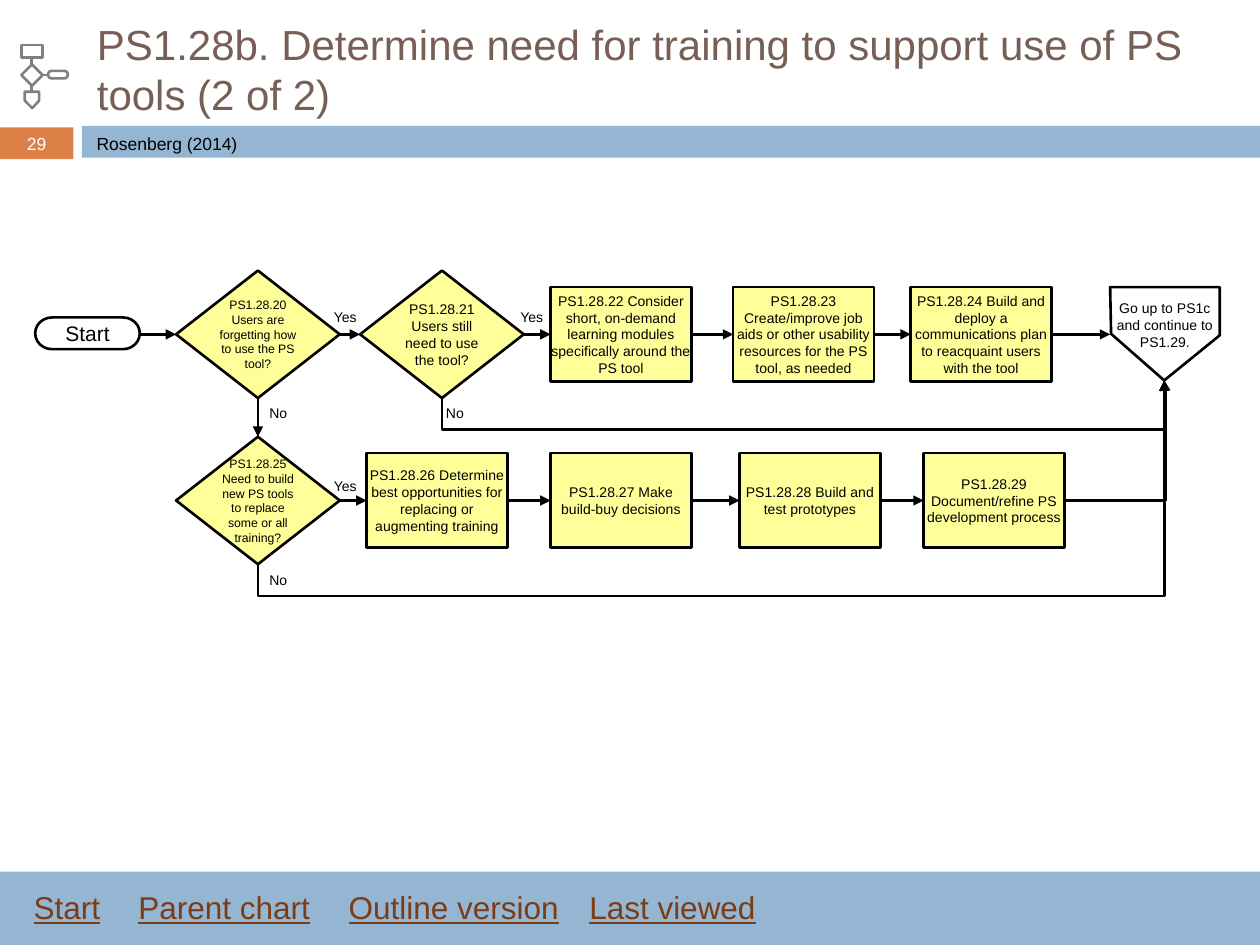
from itertools import pairwise

from lxml.etree import SubElement
from pptx import Presentation
from pptx.dml.color import RGBColor
from pptx.enum.shapes import MSO_CONNECTOR, MSO_SHAPE
from pptx.enum.text import MSO_ANCHOR, PP_ALIGN
from pptx.oxml.ns import qn
from pptx.util import Cm, Pt

BLACK, WHITE, GRAY = "000000", "FFFFFF", "808080"
BLUE, ORANGE, YELLOW = "94B6D2", "DD8047", "FFFF99"
TITLE_BROWN, LINK_BROWN = "775F55", "7B3C16"

ROW_1, ROW_2 = 6.74, 10.09  # centre lines of the two rows
BOX_SIZE, DIAMOND_SIZE = (2.84, 1.91), (3.3, 2.57)
TIP = (23.47, 7.67)  # lower point of the off-page connector
DROP = 0.64  # how far a "No" line falls before it turns


def color(value):
    return RGBColor.from_string(value)


def write(shape, paragraphs, size, text_color=BLACK, align=PP_ALIGN.CENTER,
          anchor=MSO_ANCHOR.MIDDLE, insets=None, underline=None):
    frame = shape.text_frame
    frame.word_wrap = True
    frame.vertical_anchor = anchor
    if insets:
        (frame.margin_left, frame.margin_top,
         frame.margin_right, frame.margin_bottom) = map(Cm, insets)
    for index, text in enumerate(paragraphs):
        paragraph = frame.add_paragraph() if index else frame.paragraphs[0]
        paragraph.alignment = align
        run = paragraph.add_run()
        run.text = text
        run.font.name = "Arial"
        run.font.size = Pt(size)
        run.font.underline = underline
        run.font.color.rgb = color(text_color)


def style(shape, fill=None, line=None):
    shape.shadow.inherit = False
    if fill:
        shape.fill.solid()
        shape.fill.fore_color.rgb = color(fill)
    else:
        shape.fill.background()
    if line:
        shape.line.color.rgb = color(line)
        shape.line.width = Pt(1.5)
    else:
        shape.line.fill.background()


def add_block(slide, kind, box, fill=None, line=None):
    shape = slide.shapes.add_shape(kind, *map(Cm, box))
    style(shape, fill, line)
    return shape


def add_outline(slide, points, fill, line):
    start, *others = [(Cm(x), Cm(y)) for x, y in points]
    builder = slide.shapes.build_freeform(*start, scale=1.0)
    builder.add_line_segments(others, close=True)
    shape = builder.convert_to_shape()
    style(shape, fill, line)
    return shape


def add_label(slide, box, text, size, **options):
    shape = slide.shapes.add_textbox(*map(Cm, box))
    write(shape, [text], size, align=PP_ALIGN.LEFT, **options)


def add_step(slide, kind, left, middle, text, size=8):
    width, height = DIAMOND_SIZE if kind == MSO_SHAPE.DIAMOND else BOX_SIZE
    box = (left, middle - height / 2, width, height)
    shape = add_block(slide, kind, box, YELLOW, BLACK)
    write(shape, [text], size, insets=(0, 0, 0, 0))
    return shape


def add_line(slide, start, end, line=BLACK, arrow=True, kind=MSO_CONNECTOR.STRAIGHT):
    connector = slide.shapes.add_connector(kind, *map(Cm, start + end))
    connector.line.color.rgb = color(line)
    connector.line.width = Pt(1.5)
    if arrow:
        SubElement(connector.line._get_or_add_ln(), qn("a:tailEnd"), type="triangle")
    SubElement(connector._element.spPr, qn("a:effectLst"))
    return connector


def set_bends(connector, preset, *adjustments):
    geometry = connector._element.spPr.find(qn("a:prstGeom"))
    geometry.set("prst", preset)
    guides = geometry.find(qn("a:avLst"))
    if guides is None:
        guides = SubElement(geometry, qn("a:avLst"))
    for number, value in enumerate(adjustments, 1):
        SubElement(guides, qn("a:gd"), name=f"adj{number}",
                   fmla=f"val {round(value * 100000)}")


def add_no_route(slide, start, end):
    """Run down by DROP, across, then up to the end point."""
    connector = add_line(slide, start, end, kind=MSO_CONNECTOR.ELBOW)
    across, rise = end[0] - start[0], start[1] - end[1]
    # The frame is turned by 90 degrees about its centre
    connector.left = Cm((start[0] + end[0] - rise) / 2)
    connector.top = Cm((start[1] + end[1] - across) / 2)
    connector.width, connector.height = Cm(rise), Cm(across)
    frame = connector._element.spPr.find(qn("a:xfrm"))
    for name, value in (("rot", "5400000"), ("flipH", "1"), ("flipV", "1")):
        frame.set(name, value)
    set_bends(connector, "bentConnector4", -DROP / rise, 1)


def link_row(slide, shapes, middle):
    for before, after in pairwise(shapes):
        right = (before.left + before.width) / Cm(1)
        add_line(slide, (right, middle), (after.left / Cm(1), middle))


def add_icon(slide):
    for kind, box in ((MSO_SHAPE.RECTANGLE, (0.43, 0.91, 0.43, 0.25)),
                      (MSO_SHAPE.DIAMOND, (0.43, 1.3, 0.43, 0.43)),
                      (MSO_SHAPE.FLOWCHART_TERMINATOR, (0.97, 1.43, 0.4, 0.15))):
        add_block(slide, kind, box, WHITE, GRAY)
    add_outline(slide, [(0.5, 1.85), (0.79, 1.85), (0.79, 2.03), (0.65, 2.18),
                        (0.5, 2.03)], WHITE, GRAY)
    for start, end in (((0.64, 1.16), (0.64, 1.3)), ((0.64, 1.73), (0.64, 1.85)),
                       ((0.86, 1.51), (0.97, 1.51))):
        add_line(slide, start, end, GRAY, arrow=False)


def add_page_frame(slide):
    # Bands and page number
    tag = add_block(slide, MSO_SHAPE.RECTANGLE, (0, 2.57, 1.48, 0.64), ORANGE)
    write(tag, ["29"], 10, WHITE)
    add_block(slide, MSO_SHAPE.RECTANGLE, (1.65, 2.54, 23.75, 0.64), BLUE)
    add_block(slide, MSO_SHAPE.RECTANGLE, (0, 17.57, 25.4, 1.48), BLUE)
    add_icon(slide)

    # Title and source
    title = slide.shapes.title
    title.left, title.top, title.width, title.height = map(Cm, (1.7, 0.2, 23.06, 2.36))
    write(title, ["PS1.28b. Determine need for training to support use of PS tools (2 of 2)"],
          24, TITLE_BROWN, PP_ALIGN.LEFT)
    add_label(slide, (1.7, 2.54, 23.06, 0.69), "Rosenberg (2014)", 10)

    # Navigation
    for left, width, text in ((0.43, 1.9, "Start"), (2.54, 4.01, "Parent chart"),
                              (6.78, 4.88, "Outline version"), (11.63, 3.86, "Last viewed")):
        add_label(slide, (left, 17.78, width, 1.02), text, 18, text_color=LINK_BROWN,
                  anchor=MSO_ANCHOR.TOP, underline=True)


def add_flowchart(slide):
    diamond, rectangle = MSO_SHAPE.DIAMOND, MSO_SHAPE.RECTANGLE

    # Terminals
    start = add_block(slide, MSO_SHAPE.FLOWCHART_TERMINATOR, (0.71, 6.4, 2.11, 0.64), line=BLACK)
    write(start, ["Start"], 12)
    exit_page = add_outline(slide, [(22.38, 5.79), (24.59, 5.79), (24.59, 6.76), TIP,
                                    (22.4, 6.73)], WHITE, BLACK)
    write(exit_page, ["Go up to PS1c and continue to", "PS1.29."], 8,
          anchor=MSO_ANCHOR.TOP, insets=(0, 0.25, 0, 0))

    # Steps
    upper = [add_step(slide, kind, left, ROW_1, *text) for kind, left, *text in (
        (diamond, 3.55, "PS1.28.20 Users are forgetting how to use the PS tool?", 7),
        (diamond, 7.26, "PS1.28.21 Users still need to use the tool?"),
        (rectangle, 11.1, "PS1.28.22 Consider short, on-demand learning modules "
                          "specifically around the PS tool"),
        (rectangle, 14.78, "PS1.28.23 Create/improve job aids or other usability "
                           "resources for the PS tool, as needed"),
        (rectangle, 18.36, "PS1.28.24 Build and deploy a communications plan to "
                           "reacquaint users with the tool"))]
    lower = [add_step(slide, kind, left, ROW_2, *text) for kind, left, *text in (
        (diamond, 3.55, "PS1.28.25 Need to build new PS tools to replace some or all training?", 7),
        (rectangle, 7.39, "PS1.28.26 Determine best opportunities for replacing or "
                          "augmenting training"),
        (rectangle, 11.1, "PS1.28.27 Make build-buy decisions"),
        (rectangle, 14.91, "PS1.28.28 Build and test prototypes"),
        (rectangle, 18.62, "PS1.28.29 Document/refine PS development process"))]

    # Arrows and routes to the exit
    link_row(slide, [start, *upper, exit_page], ROW_1)
    link_row(slide, lower, ROW_2)
    half = DIAMOND_SIZE[1] / 2
    add_line(slide, (5.2, ROW_1 + half), (5.2, ROW_2 - half))
    add_no_route(slide, (5.2, ROW_2 + half), TIP)
    add_no_route(slide, (8.91, ROW_1 + half), TIP)
    last = add_line(slide, (21.46, ROW_2), TIP, kind=MSO_CONNECTOR.ELBOW)
    set_bends(last, "bentConnector3", 1.01)

    # Answers
    for left, top, text in ((6.48, 6.1, "Yes"), (10.24, 6.1, "Yes"), (6.48, 9.5, "Yes"),
                            (5.18, 8.03, "No"), (8.74, 8.03, "No"), (5.18, 11.4, "No")):
        add_label(slide, (left, top, 1.12, 0.61), text, 8, anchor=MSO_ANCHOR.TOP)


def main():
    presentation = Presentation()
    presentation.slide_width, presentation.slide_height = Cm(25.4), Cm(19.05)
    slide = presentation.slides.add_slide(presentation.slide_layouts[5])
    add_page_frame(slide)
    add_flowchart(slide)
    presentation.save("out.pptx")


if __name__ == "__main__":
    main()
